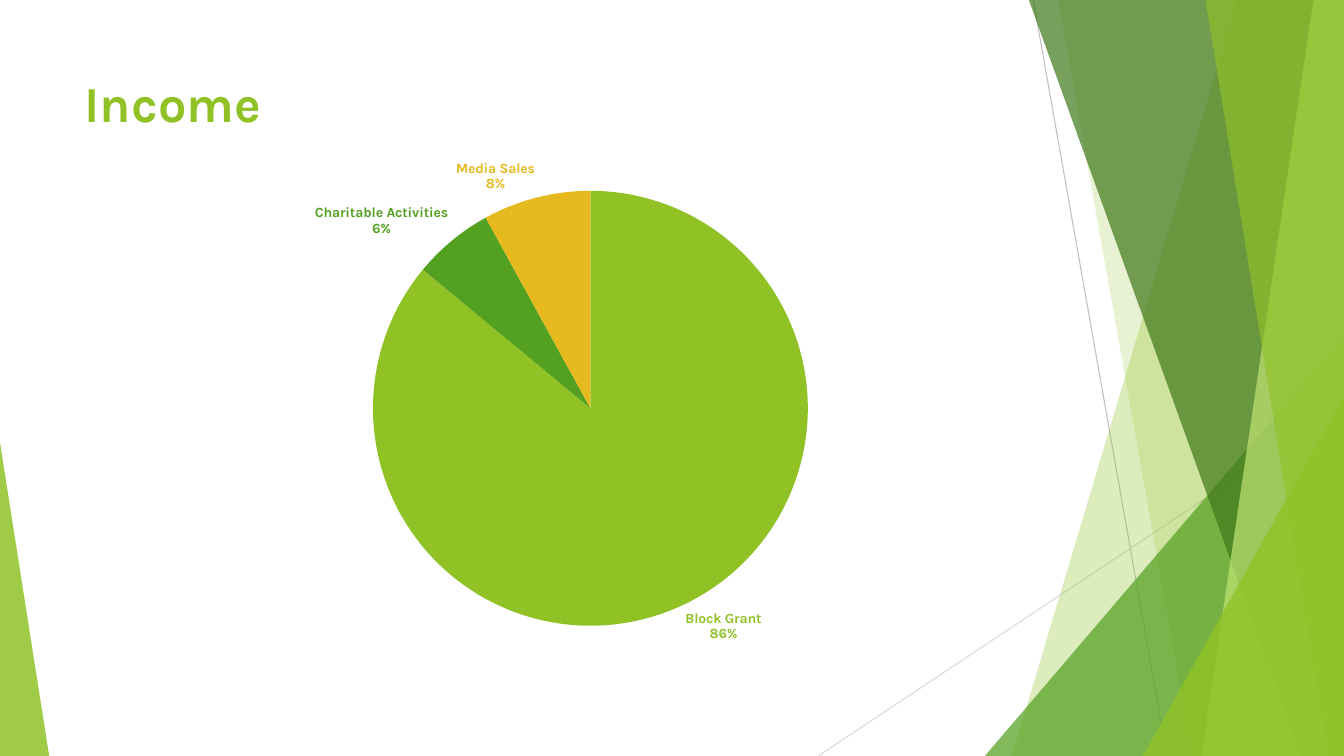
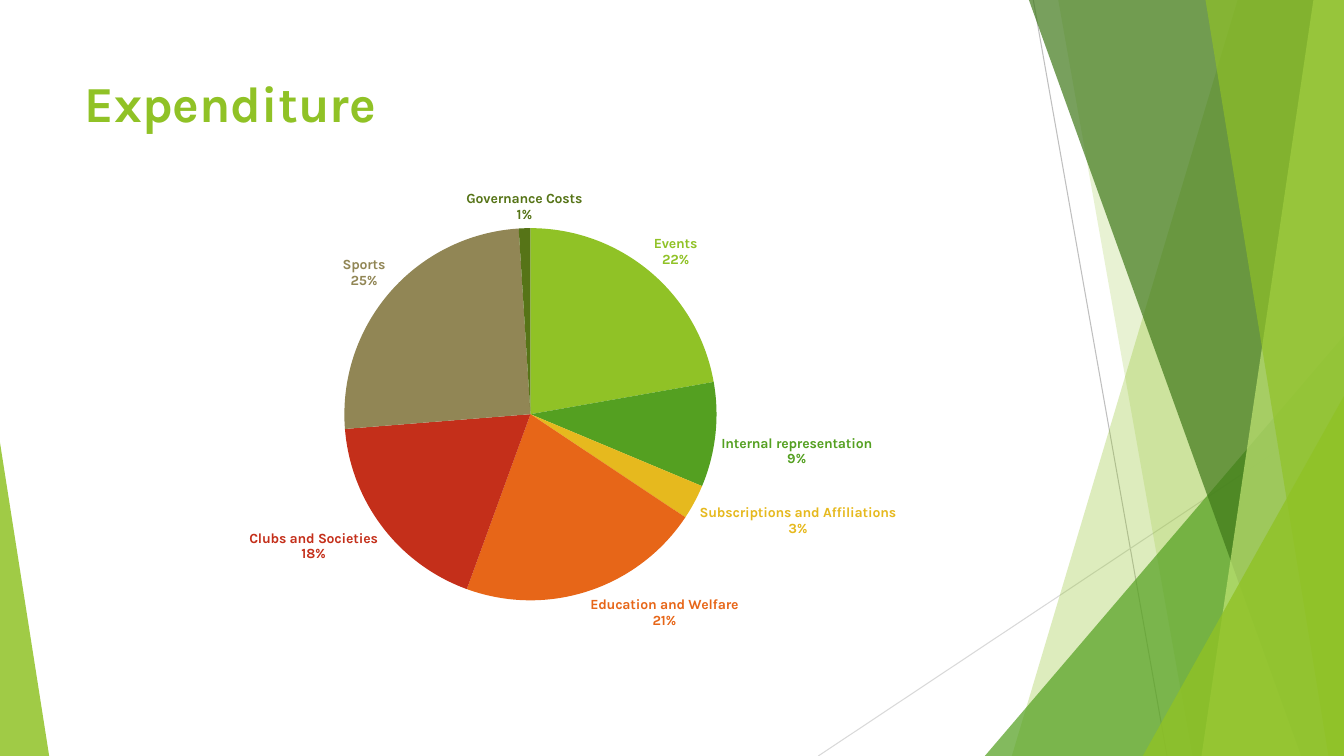
from lxml import etree
from pptx import Presentation
from pptx import util as u
from pptx.chart import data as cd
from pptx.dml.color import RGBColor
from pptx.enum import chart as ch, shapes, text
from pptx.oxml.ns import qn

HUES = {
    "lime": "90C226", "green": "54A021", "gold": "E6B91E", "orange": "E76618",
    "red": "C42F1A", "taupe": "918655", "olive": "567417",
    "forest": "3F7819", "pale": "C0E474", "grey": "BFBFBF", "mist": "D9D9D9",
    "black": "000000",
}
FONT = "Karla"
WIDE, HIGH = 33.87, 19.05
TITLE = (1.88, 1.7, 23.88, 3.66)


def rgb(hue):
    return RGBColor.from_string(HUES[hue])


def cms(*nums):
    return [u.Cm(n) for n in nums]


def tint(shape, hue, alpha):
    """Fill without outline or shadow; alpha is a percentage."""
    shape.shadow.inherit = False
    shape.line.fill.background()
    shape.fill.solid()
    shape.fill.fore_color.rgb = rgb(hue)
    clr = shape.element.spPr.find(".//" + qn("a:srgbClr"))
    etree.SubElement(clr, qn("a:alpha"), val=str(alpha * 1000))


# Backdrop parts
def ray(slide, ends, hue):
    line = slide.shapes.add_connector(shapes.MSO_CONNECTOR.STRAIGHT, *cms(*ends))
    line.line.color.rgb = rgb(hue)
    line.line.width = u.Pt(0.75)
    etree.SubElement(line.element.spPr, qn("a:effectLst"))


def band(slide, top, foot, hue, alpha):
    """Full-height band from a slanted left edge to the right slide edge."""
    pen = slide.shapes.build_freeform(*cms(top, 0))
    rest = [(WIDE, 0), (WIDE, HIGH), (foot, HIGH)]
    pen.add_line_segments([cms(*spot) for spot in rest], close=True)
    tint(pen.convert_to_shape(), hue, alpha)


def wedge(slide, left, top, width, apex, hue, alpha):
    """Triangle standing on the slide's lower edge."""
    tri = slide.shapes.add_shape(shapes.MSO_SHAPE.ISOSCELES_TRIANGLE,
                                 *cms(left, top, width, HIGH - top))
    tri.adjustments[0] = apex
    tint(tri, hue, alpha)


def backdrop(slide):
    ray(slide, (26.04, 0, 29.41, HIGH), "grey")
    ray(slide, (WIDE, 10.24, 20.62, HIGH), "mist")
    band(slide, 31.19, 25.5, "lime", 30)
    band(slide, 26.67, 30.05, "lime", 20)
    wedge(slide, 24.82, 8.46, WIDE - 24.82, 1, "green", 72)
    band(slide, 25.93, 32.79, "forest", 70)
    band(slide, 33.1, 30.28, "pale", 70)
    band(slide, 30.38, 33.48, "lime", 65)
    wedge(slide, 28.8, 9.98, WIDE - 28.8, 1, "lime", 80)
    wedge(slide, 0, 11.15, 1.24, 0, "lime", 85)


def share(slide, layout):
    """Draw the backdrop and hand it to the layout, for all slides."""
    for holder in list(layout.placeholders):
        if holder.placeholder_format.type != shapes.PP_PLACEHOLDER.TITLE:
            holder.element.getparent().remove(holder.element)
    backdrop(slide)
    for shape in list(slide.shapes):
        if not shape.is_placeholder:
            layout.shapes.element.append(shape.element)


# Title
def head(slide, words, box):
    title = slide.shapes.title
    title.left, title.top, title.width, title.height = cms(*box)
    frame = title.text_frame
    frame.text = words
    frame.word_wrap = True
    frame.auto_size = text.MSO_AUTO_SIZE.NONE
    frame.vertical_anchor = text.MSO_ANCHOR.TOP
    para = frame.paragraphs[0]
    para.alignment = text.PP_ALIGN.LEFT
    font = para.font
    font.name, font.size, font.bold = FONT, u.Pt(36), True
    font.color.rgb = rgb("lime")


# Pie chart
def place(chart, box, disc):
    """Fix the pie at disc (left, top, diameter) inside the chart box."""
    plot = chart.element.find(".//" + qn("c:plotArea"))
    for old in plot.findall(qn("c:layout")):
        plot.remove(old)
    outer = etree.Element(qn("c:layout"))
    plot.insert(0, outer)
    inner = etree.SubElement(outer, qn("c:manualLayout"))
    left, top, size = disc
    wide, high = box[2:]
    marks = [("layoutTarget", "inner"), ("xMode", "edge"), ("yMode", "edge"),
             ("x", left / wide), ("y", top / high),
             ("w", size / wide), ("h", size / high)]
    for name, val in marks:
        etree.SubElement(inner, qn("c:" + name), val=str(val))


def pie(slide, rows, box, disc):
    names, vals, hues = zip(*rows)
    data = cd.CategoryChartData(number_format="0")
    data.categories = names
    data.add_series("Series 1", vals)
    chart = slide.shapes.add_chart(ch.XL_CHART_TYPE.PIE, *cms(*box), data).chart
    chart.has_title = chart.has_legend = False
    chart.font.name, chart.font.size = FONT, u.Pt(10)
    chart.font.color.rgb = rgb("black")
    plot = chart.plots[0]
    plot.vary_by_categories = True
    place(chart, box, disc)

    # Labels: name above percentage, in the slice's colour
    row = plot.series[0]
    tags = row.data_labels
    tags.show_value = False
    tags.show_category_name = tags.show_percentage = True
    tags.number_format, tags.number_format_is_linked = "0%", False
    tags.position = ch.XL_LABEL_POSITION.OUTSIDE_END
    for i, hue in enumerate(hues):
        point = row.points[i]
        point.format.fill.solid()
        point.format.fill.fore_color.rgb = rgb(hue)
        point.format.line.fill.background()
        tag = point.data_label
        tag.position = ch.XL_LABEL_POSITION.OUTSIDE_END
        font = tag.font
        font.name, font.size, font.bold = FONT, u.Pt(10), True
        font.color.rgb = rgb(hue)
    flags = {"showVal": "0", "showCatName": "1", "showPercent": "1"}
    for tag in chart.element.iter(qn("c:dLbl")):
        for name, val in flags.items():
            tag.find(qn("c:" + name)).set("val", val)
        etree.SubElement(tag, qn("c:separator")).text = "\n"


INCOME = [
    ("Block Grant", 86, "lime"),
    ("Charitable Activities", 6, "green"),
    ("Media Sales", 8, "gold"),
]
COSTS = [
    ("Events", 22, "lime"),
    ("Internal representation", 9, "green"),
    ("Subscriptions and Affiliations", 3, "gold"),
    ("Education and Welfare", 21, "orange"),
    ("Clubs and Societies", 18, "red"),
    ("Sports", 25, "taupe"),
    ("Governance Costs", 1, "olive"),
]
# Title, rows, chart box, pie disc
PAGES = [
    ("Income", INCOME, (1.88, 3.61, 23.88, 13.16), (7.52, 1.2, 10.96)),
    ("Expenditure", COSTS, (1.32, 4.45, 25.1, 11.84), (7.36, 1.3, 9.38)),
]


def main():
    deck = Presentation()
    deck.slide_width, deck.slide_height = cms(WIDE, HIGH)
    layout = deck.slide_layouts[5]
    for i, (words, rows, box, disc) in enumerate(PAGES):
        slide = deck.slides.add_slide(layout)
        if i == 0:
            share(slide, layout)
        head(slide, words, TITLE)
        pie(slide, rows, box, disc)
    deck.save("out.pptx")


if __name__ == "__main__":
    main()
